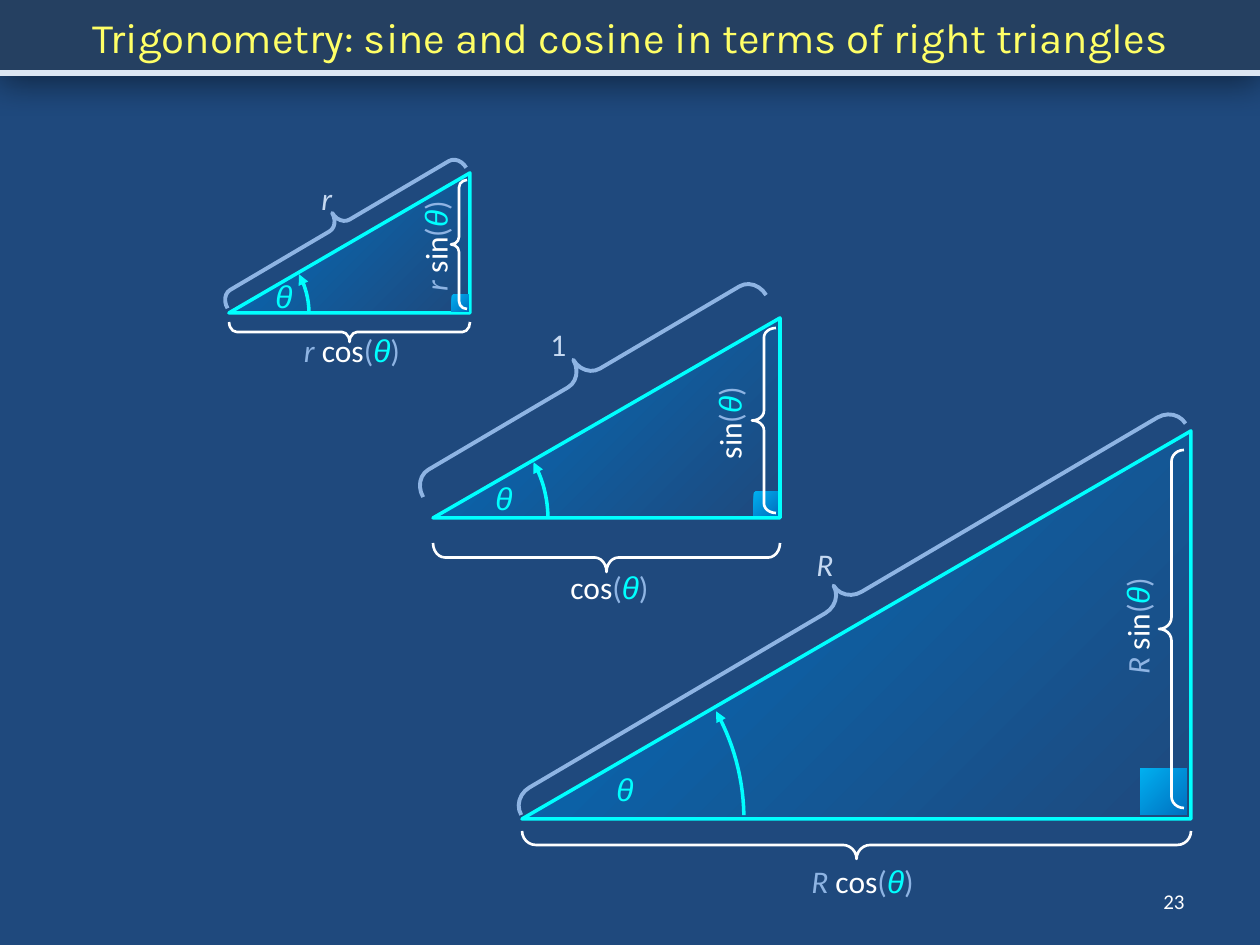
"""Build a slide relating sine and cosine to three similar right triangles."""
import math

import lxml.etree
import pptx
import pptx.dml.color
import pptx.enum.shapes
import pptx.enum.text
import pptx.oxml.ns
import pptx.util

SHAPE = pptx.enum.shapes.MSO_SHAPE
ALIGN = pptx.enum.text.PP_ALIGN
qn = pptx.oxml.ns.qn

EMU_PER_PX = 914400 / 126
WHITE, CYAN, BLUE, PALE = "FFFFFF", "00FFFF", "8EB4E3", "C6D9F1"
ARC_DEGREES = 29
HYPOTENUSE_ROTATION = 59.5

TITLE = "Trigonometry: sine and cosine in terms of right triangles"
PAGE_NUMBER = "23"
TRIANGLES = [
    {"triangle": (522, 431, 669, 388), "radius": 222, "factor": "R",
     "theta": (604, 764, 64, 50),
     "length": (804, 539, 73, 50), "length_brace": (824, 217, 39, 771), "length_curl": 0.54,
     "sine": (1076, 601, 122, 50), "sine_brace": (1159, 450, 25, 358), "sine_curl": 0.46,
     "cosine": (798, 856, 129, 50), "cosine_gap": 12, "cosine_depth": 28, "cosine_curl": 0.49},
    {"triangle": (229, 173, 241, 140), "radius": 80, "factor": "r",
     "theta": (263, 271, 42, 50),
     "length": (309, 173, 37, 50), "length_brace": (325, 87, 29, 277), "length_curl": 0.4,
     "sine": (377, 221, 116, 50), "sine_brace": (451, 180, 16, 129), "sine_curl": 0.47,
     "cosine": (291, 325, 122, 50), "cosine_gap": 9, "cosine_depth": 20, "cosine_curl": 0.38},
    {"triangle": (433, 318, 347, 200), "radius": 115, "factor": "",
     "theta": (483, 473, 43, 50),
     "length": (538, 319, 42, 50), "length_brace": (563, 179, 42, 398), "length_curl": 0.44,
     "sine": (680, 398, 98, 50), "sine_brace": (752, 328, 24, 185), "sine_curl": 0.4,
     "cosine": (558, 562, 103, 50), "cosine_gap": 25, "cosine_depth": 29, "cosine_curl": 0.41},
]


def px(value):
    """Turn pixels into EMU."""
    return pptx.util.Emu(round(value * EMU_PER_PX))


def rgb(color):
    """Turn a hex string into a colour."""
    return pptx.dml.color.RGBColor.from_string(color)


def add_run(paragraph, text, color=WHITE, size=18, font="Calibri", italic=False):
    """Append one formatted run."""
    run = paragraph.add_run()
    run.text = text
    run.font.name, run.font.size = font, pptx.util.Pt(size)
    run.font.italic, run.font.bold = italic, False
    run.font.color.rgb = rgb(color)


def add_label(slide, box, runs, align=ALIGN.LEFT, rotation=0, wrap=False):
    """Add a text box made of (text, format) runs."""
    shape = slide.shapes.add_textbox(*map(px, box))
    shape.rotation = rotation
    shape.text_frame.word_wrap = wrap
    paragraph = shape.text_frame.paragraphs[0]
    paragraph.alignment = align
    for text, style in runs:
        add_run(paragraph, text, **style)
    return shape


def style_outline(shape, color, width):
    """Give a shape a plain outline and no fill or shadow."""
    shape.shadow.inherit = False
    shape.fill.background()
    shape.line.color.rgb = rgb(color)
    shape.line.width = pptx.util.Pt(width)


def fill_gradient(shape, colors):
    """Fill a shape from its top left to its bottom right."""
    shape.fill.gradient()
    shape.fill.gradient_angle = 315
    for stop, position, color in zip(shape.fill.gradient_stops, (0, 1), colors):
        stop.position = position
        stop.color.rgb = rgb(color)


def add_brace(slide, kind, box, curl, color=WHITE, width=1.5, rotation=0):
    """Add a curly brace."""
    shape = slide.shapes.add_shape(kind, *map(px, box))
    shape.adjustments[0], shape.adjustments[1] = curl, 0.5
    shape.rotation = rotation
    style_outline(shape, color, width)


def add_angle_arrow(slide, center_x, center_y, radius):
    """Add the arc with an arrowhead that marks the angle."""
    angles = [math.radians(degrees) for degrees in range(1, ARC_DEGREES + 1, 2)]
    points = [(px(center_x + radius * math.cos(angle)), px(center_y - radius * math.sin(angle)))
              for angle in angles]
    builder = slide.shapes.build_freeform(*points[0])
    builder.add_line_segments(points[1:], close=False)
    arc = builder.convert_to_shape()
    style_outline(arc, CYAN, 2)
    lxml.etree.SubElement(arc.element.spPr.find(qn("a:ln")), qn("a:tailEnd"), type="triangle")


def add_triangle(slide, item):
    """Add one right triangle with its braces and labels."""
    left, top, width, height = item["triangle"]
    right, bottom = left + width, top + height
    triangle = slide.shapes.add_shape(SHAPE.ISOSCELES_TRIANGLE, *map(px, item["triangle"]))
    triangle.adjustments[0] = 1
    style_outline(triangle, CYAN, 2)
    fill_gradient(triangle, ("0070C0", "1F497D"))

    side, inset = 0.07 * width, 0.006 * width
    corner_box = (right - inset - side, bottom - inset - side, side, side)
    corner = slide.shapes.add_shape(SHAPE.RECTANGLE, *map(px, corner_box))
    corner.shadow.inherit = False
    corner.line.fill.background()
    fill_gradient(corner, ("00B0F0", "0070C0"))

    add_angle_arrow(slide, left, bottom, item["radius"])
    theta = ("θ", {"color": CYAN, "font": "Arial", "italic": True})
    add_label(slide, item["theta"], [theta])

    factor = item["factor"]
    add_label(slide, item["length"], [(factor or "1", {"color": PALE, "italic": bool(factor)})])
    add_brace(slide, SHAPE.LEFT_BRACE, item["length_brace"], item["length_curl"],
              color=BLUE, width=2.25, rotation=HYPOTENUSE_ROTATION)

    prefix = [(factor + " ", {"color": BLUE, "italic": True})] if factor else []
    argument = [("(", {"color": BLUE}), theta, (")", {"color": BLUE})]
    for name, word, rotation in (("sine", "sin", 270), ("cosine", "cos", 0)):
        add_label(slide, item[name], prefix + [(word, {})] + argument, ALIGN.CENTER, rotation)

    add_brace(slide, SHAPE.LEFT_BRACE, item["sine_brace"], item["sine_curl"])
    depth = item["cosine_depth"]
    middle_y = bottom + item["cosine_gap"] + depth / 2
    cosine_box = (left + width / 2 - depth / 2, middle_y - width / 2, depth, width)
    add_brace(slide, SHAPE.RIGHT_BRACE, cosine_box, item["cosine_curl"], rotation=90)


def add_title(slide):
    """Format the title bar with its soft shadow and rule."""
    title = slide.shapes.title
    title.left, title.top, title.width, title.height = map(px, (0, 0, 1260, 73))
    title.fill.solid()
    title.fill.fore_color.rgb = rgb("254061")
    frame = title.text_frame
    frame.auto_size = pptx.enum.text.MSO_AUTO_SIZE.NONE
    frame.vertical_anchor = pptx.enum.text.MSO_ANCHOR.MIDDLE
    frame.paragraphs[0].alignment = ALIGN.CENTER
    add_run(frame.paragraphs[0], TITLE, color="FFFF66", size=24, font="Karla")

    effects = lxml.etree.SubElement(title.element.spPr, qn("a:effectLst"))
    shadow = lxml.etree.SubElement(
        effects, qn("a:outerShdw"), blurRad=str(pptx.util.Pt(20)), dist=str(pptx.util.Pt(5)),
        dir="5400000", algn="t", rotWithShape="0")
    black = lxml.etree.SubElement(shadow, qn("a:srgbClr"), val="000000")
    lxml.etree.SubElement(black, qn("a:alpha"), val="50000")

    frame_border = slide.shapes.add_shape(SHAPE.RECTANGLE, *map(px, (-21, 73, 1302, 903)))
    style_outline(frame_border, "DCE6F2", 3)


def main():
    """Build and save the presentation."""
    presentation = pptx.Presentation()
    presentation.slide_width, presentation.slide_height = px(1260), px(945)
    slide = presentation.slides.add_slide(presentation.slide_layouts[5])
    slide.background.fill.solid()
    slide.background.fill.fore_color.rgb = rgb("1F497D")
    add_title(slide)
    for item in TRIANGLES:
        add_triangle(slide, item)
    number = add_label(slide, (903, 876, 294, 50), [(PAGE_NUMBER, {"size": 12})],
                       ALIGN.RIGHT, wrap=True)
    number.text_frame.vertical_anchor = pptx.enum.text.MSO_ANCHOR.MIDDLE
    presentation.save("out.pptx")


if __name__ == "__main__":
    main()
